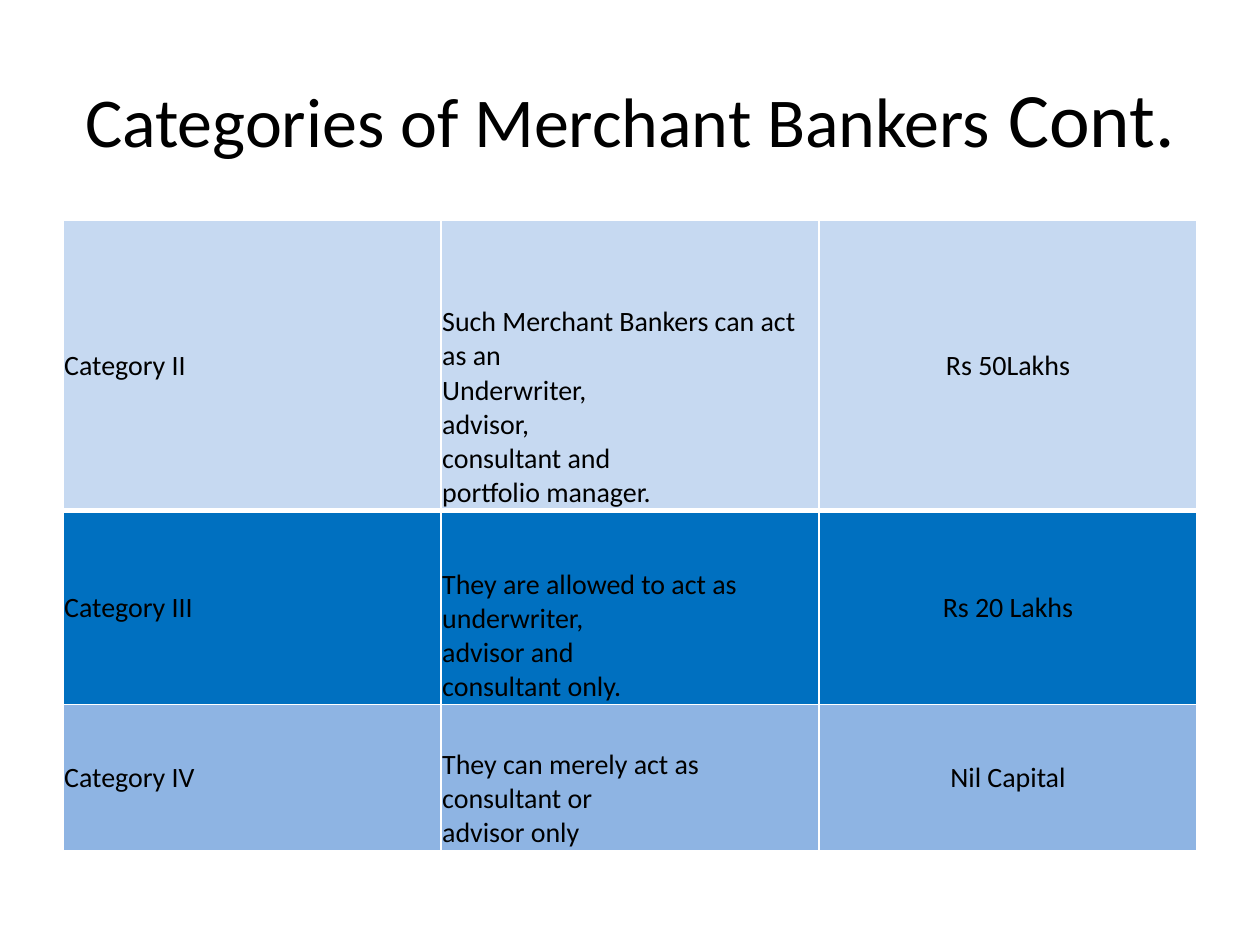
import pptx
import pptx.util
import pptx.dml.color
import pptx.enum.text
import pptx.oxml
import pptx.oxml.ns

Inches = pptx.util.Inches
Align = pptx.enum.text.PP_ALIGN
Anchor = pptx.enum.text.MSO_ANCHOR

TITLE = [("Categories of Merchant Bankers", 40), (" Cont.", 44)]
ROWS = [
    ("C6D9F1", 2.3, ["Category II",
                     "Such Merchant Bankers can act as an\vUnderwriter,\vadvisor, \v"
                     "consultant and \vportfolio manager.",
                     "Rs 50Lakhs"]),
    ("0070C0", 1.54, ["Category III",
                      "They are allowed to act as \vunderwriter,\vadvisor and \vconsultant only.",
                      "Rs 20 Lakhs"]),
    ("8EB4E3", 1.16, ["Category IV",
                      "They can merely act as \vconsultant or \vadvisor only",
                      "Nil Capital"]),
]
COLUMNS = [(3, Align.LEFT, Anchor.MIDDLE), (3, Align.LEFT, Anchor.BOTTOM), (3, Align.CENTER, Anchor.MIDDLE)]


def color(value):
    return pptx.dml.color.RGBColor.from_string(value)


def style(span, size):
    span.font.name = "Calibri"
    span.font.size = pptx.util.Pt(size)
    span.font.color.rgb = color("000000")


def add_borders(cell, widths):
    for side, width in zip("LRTB", widths):
        cell._tc.get_or_add_tcPr().append(pptx.oxml.parse_xml(
            f'<a:ln{side} {pptx.oxml.ns.nsdecls("a")} w="{pptx.util.Pt(width)}">'
            f'<a:solidFill><a:srgbClr val="FFFFFF"/></a:solidFill></a:ln{side}>'))


def add_title(page):
    box = page.shapes.title
    box.left, box.top, box.width, box.height = map(Inches, (0.5, 0.3, 9, 1.25))
    box.text_frame.vertical_anchor = Anchor.MIDDLE
    para = box.text_frame.paragraphs[0]
    para.alignment = Align.CENTER
    for words, size in TITLE:
        span = para.add_run()
        span.text = words
        style(span, size)


def fill_cell(cell, words, fill, align, anchor, borders):
    cell.margin_left = cell.margin_right = cell.margin_top = Inches(0.01)
    cell.margin_bottom = 0
    cell.vertical_anchor = anchor
    add_borders(cell, borders)
    cell.fill.solid()
    cell.fill.fore_color.rgb = color(fill)
    cell.text_frame.text = words
    para = cell.text_frame.paragraphs[0]
    para.alignment = align
    for span in para.runs:
        style(span, 16)


def add_category_table(page):
    table = page.shapes.add_table(len(ROWS), len(COLUMNS), *map(Inches, (0.5, 1.75, 9, 5))).table
    for column, (width, align, anchor) in enumerate(COLUMNS):
        table.columns[column].width = Inches(width)
        for row, (fill, height, texts) in enumerate(ROWS):
            table.rows[row].height = Inches(height)
            borders = (1, 1, 3 if row == 1 else 1, 3 if row == 0 else 1)
            fill_cell(table.cell(row, column), texts[column], fill, align, anchor, borders)


def main():
    """Build the slide on merchant banker categories."""
    deck = pptx.Presentation()
    deck.slide_width, deck.slide_height = Inches(10), Inches(7.5)
    page = deck.slides.add_slide(deck.slide_layouts[5])
    add_title(page)
    add_category_table(page)
    deck.save("out.pptx")


if __name__ == "__main__":
    main()
